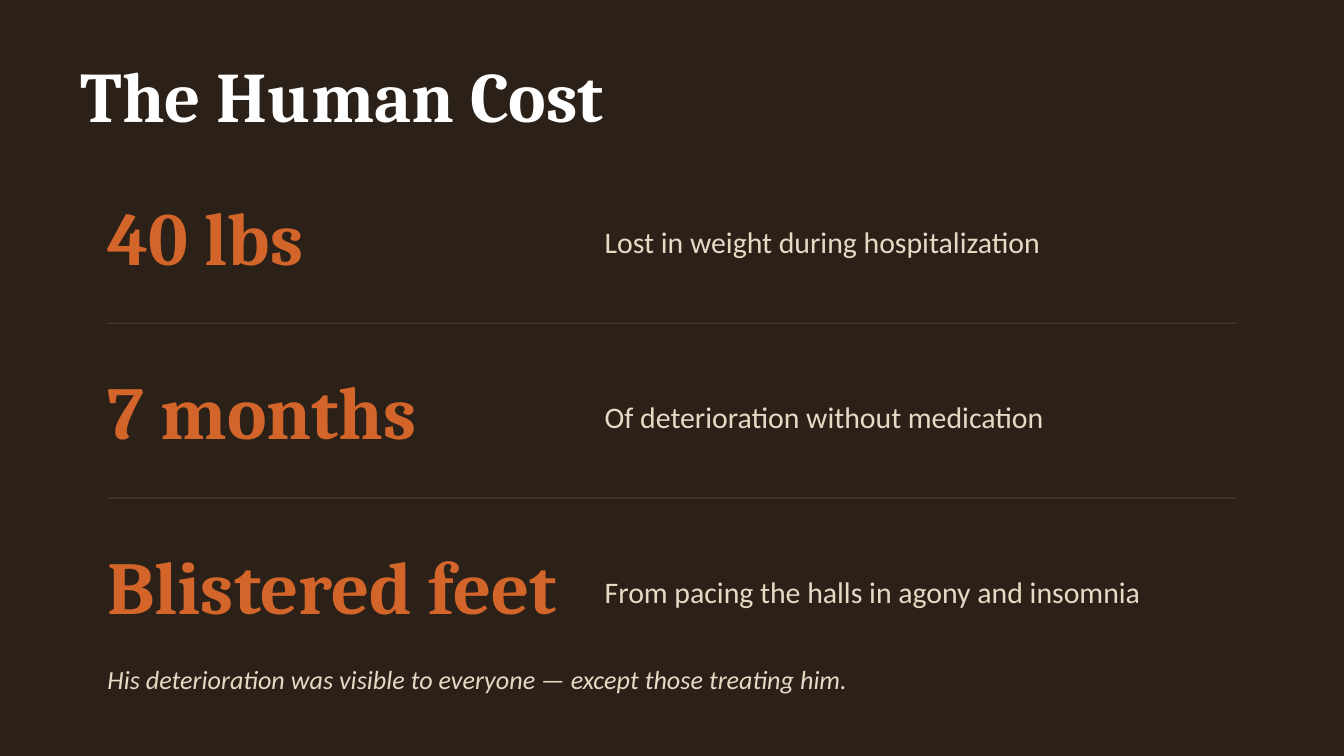
from collections import namedtuple

from pptx import Presentation
from pptx.dml.color import RGBColor
from pptx.enum.shapes import MSO_SHAPE
from pptx.enum.text import MSO_ANCHOR
from pptx.util import Inches, Pt

BACKGROUND = RGBColor(0x2B, 0x21, 0x18)
WHITE = RGBColor(0xFF, 0xFF, 0xFF)
ORANGE = RGBColor(0xD4, 0x65, 0x2A)
CREAM = RGBColor(0xE8, 0xD9, 0xC5)
DIVIDER = RGBColor(0x4A, 0x3A, 0x2D)

SLIDE_WIDTH = Inches(10)
SLIDE_HEIGHT = SLIDE_WIDTH * 9 // 16
GRID_UNIT = SLIDE_WIDTH // 100

Box = namedtuple("Box", "left top width height")

STATISTICS = [
    ("40 lbs", "Lost in weight during hospitalization"),
    ("7 months", "Of deterioration without medication"),
    ("Blistered feet", "From pacing the halls in agony and insomnia"),
]


def to_lengths(box):
    """Convert a box in grid columns and rows to slide lengths."""
    return [round(value * GRID_UNIT) for value in box]


def add_text(slide, box, text, size, color, font_name="Calibri", bold=False, italic=False):
    """Place one line of vertically centred text in a box."""
    frame = slide.shapes.add_textbox(*to_lengths(box)).text_frame
    frame.word_wrap = True
    frame.vertical_anchor = MSO_ANCHOR.MIDDLE
    frame.margin_left = frame.margin_top = frame.margin_right = frame.margin_bottom = 0
    paragraph = frame.paragraphs[0]
    paragraph.text = text
    font = paragraph.font
    font.name = font_name
    font.size = Pt(size)
    font.bold = bold
    font.italic = italic
    font.color.rgb = color


def add_divider(slide, box):
    """Draw a thin rule filling a box."""
    shape = slide.shapes.add_shape(MSO_SHAPE.RECTANGLE, *to_lengths(box))
    shape.shadow.inherit = False
    shape.fill.solid()
    shape.fill.fore_color.rgb = DIVIDER
    shape.line.fill.background()


def add_statistic(slide, box, figure, description):
    """Place a large figure with its description to the right."""
    add_text(slide, Box(box.left, box.top, 35, box.height), figure, 40, ORANGE, "Cambria", bold=True)
    add_text(slide, Box(box.left + 37, box.top + 1, 50, box.height - 1), description, 16, CREAM)


def add_statistics(slide, box):
    """Stack the statistics in equal rows with a divider between neighbours."""
    pitch = box.height / len(STATISTICS)
    for index, (figure, description) in enumerate(STATISTICS):
        top = box.top + index * pitch
        if index:
            add_divider(slide, Box(box.left, top - 3, box.width, 0.1))
        add_statistic(slide, Box(box.left, top, box.width, 7), figure, description)


def build_slide(presentation):
    """Compose the title, the statistics and the closing remark."""
    slide = presentation.slides.add_slide(presentation.slide_layouts[6])
    slide.background.fill.solid()
    slide.background.fill.fore_color.rgb = BACKGROUND
    add_text(slide, Box(6, 3, 90, 8), "The Human Cost", 38, WHITE, "Cambria", bold=True)
    add_statistics(slide, Box(8, 14, 84, 39))
    remark = "His deterioration was visible to everyone — except those treating him."
    add_text(slide, Box(8, 48, 84, 5), remark, 14, CREAM, italic=True)


def main():
    """Build and save the presentation."""
    presentation = Presentation()
    presentation.slide_width = SLIDE_WIDTH
    presentation.slide_height = SLIDE_HEIGHT
    build_slide(presentation)
    presentation.save("out.pptx")


if __name__ == "__main__":
    main()
